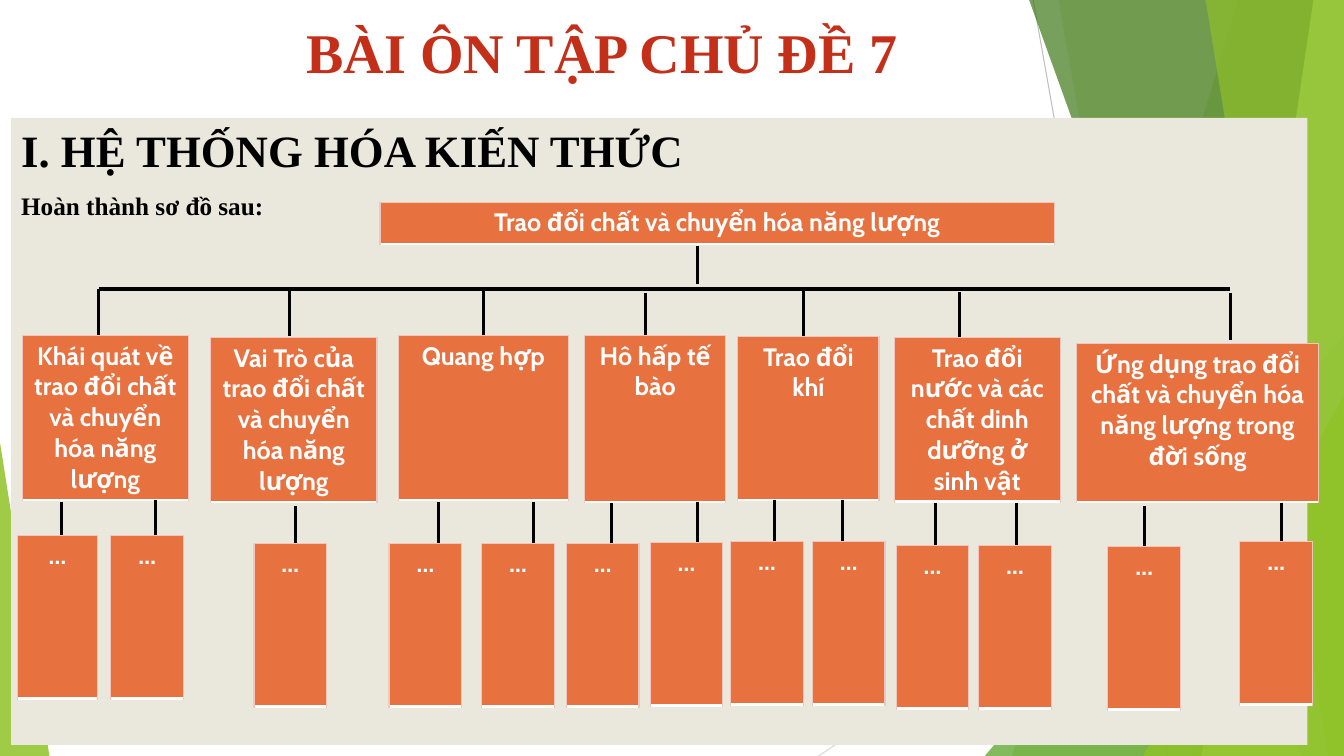
"""Build a review slide with a three-level knowledge tree."""
from dataclasses import dataclass

from lxml.etree import SubElement
from pptx import Presentation
from pptx.dml.color import RGBColor as Rgb
from pptx.enum.shapes import MSO_CONNECTOR as Connector, MSO_SHAPE as Preset
from pptx.enum.text import MSO_ANCHOR as Anchor, MSO_AUTO_SIZE as AutoSize, PP_ALIGN as Align
from pptx.oxml import parse_xml
from pptx.oxml.ns import nsdecls, qn
from pptx.util import Inches, Pt

COLUMNS, ROWS = 133.33, 75
STEM_ROWS = 4.6
LEAF_ROWS = 16.2
BUS_ROW = 28.7


@dataclass(frozen=True)
class Theme:
    """Colours, fonts and type sizes of the slide."""
    heading: str = "C42F1A"
    ink: str = "000000"
    paper: str = "FFFFFF"
    panel: str = "EAE8DC"
    node: str = "E87140"
    node_edge: str = "F3C6BD"
    lime: str = "90C226"
    leaf: str = "54A021"
    forest: str = "3F7819"
    pale: str = "C0E474"
    serif: str = "Times New Roman"
    sans: str = "Cabin"
    title_size: int = 40
    section_size: int = 32
    text_size: int = 18


@dataclass(frozen=True)
class Branch:
    """A topic with its stem (column, row) and leaves (column, row, stem column, stem row)."""
    caption: str
    frame: tuple
    stem: tuple
    leaves: tuple


THEME = Theme()
BRANCHES = (
    Branch("Khái quát về trao đổi chất và chuyển hóa năng lượng", (2.2, 33.3, 16.5, 16.3),
           (9.8, 28.7), ((1.7, 53.1, 6.1, 49.8), (11, 53.1, 15.4, 49.6))),
    Branch("Vai Trò của trao đổi chất và chuyển hóa năng lượng", (20.9, 33.5, 16.5, 16.3),
           (28.7, 28.7), ((25.2, 53.9, 29.3, 50.2),)),
    Branch("Quang hợp", (39.5, 33.3, 16.9, 16.3),
           (48, 28.7), ((38.6, 53.9, 43.5, 49.8), (47.8, 53.9, 52.9, 49.8))),
    Branch("Hô hấp tế bào", (58, 33.3, 14, 16.5),
           (64, 29.1), ((56.2, 53.9, 60.7, 49.9), (64.5, 53.8, 69.2, 49.8))),
    Branch("Trao đổi khí", (73.2, 33.4, 14, 16.2),
           (79.7, 28.8), ((72.5, 53.7, 76.8, 49.6), (80.6, 53.7, 83.6, 49.6))),
    Branch("Trao đổi nước và các chất dinh dưỡng ở sinh vật", (88.7, 33.5, 16.5, 16.2),
           (95.2, 29), ((88.9, 54.1, 92.8, 49.9), (97.1, 54.1, 100.8, 49.9))),
    Branch("Ứng dụng trao đổi chất và chuyển hóa năng lượng trong đời sống", (106.8, 34.1, 24, 15.7),
           (122.1, 29.1), ((109.9, 54.2, 113.5, 50.2), (123, 53.7, 127.1, 49.9))),
)


def grid(*counts):
    """Turn counts of columns or rows into lengths."""
    return [Inches(count / 10) for count in counts]


def write(paragraph, wording, size, font, colour):
    """Add one bold run to a paragraph and return it."""
    run = paragraph.add_run()
    run.text = wording
    run.font.size, run.font.name, run.font.bold = Pt(size), font, True
    run.font.color.rgb = Rgb.from_string(colour)
    return run


def edge(tag, colour, points):
    """Make a solid line element."""
    return parse_xml(f'<a:{tag} {nsdecls("a")} w="{int(Pt(points))}"><a:solidFill>'
                     f'<a:srgbClr val="{colour}"/></a:solidFill></a:{tag}>')


def draw_line(shapes, start, end, colour=THEME.ink, points=2.25):
    """Draw a straight line between two grid points."""
    line = shapes.add_connector(Connector.STRAIGHT, *grid(*start, *end))
    line.line.color.rgb = Rgb.from_string(colour)
    line.line.width = Pt(points)
    SubElement(line.element.spPr, qn("a:effectLst"))


def tint(facet, colour, opacity):
    """Give a facet a translucent fill and no outline."""
    facet.shadow.inherit = False
    facet.fill.solid()
    facet.fill.fore_color.rgb = Rgb.from_string(colour)
    facet.line.fill.background()
    swatch = facet.element.spPr.find(qn("a:solidFill"))[0]
    SubElement(swatch, qn("a:alpha"), val=str(opacity * 1000))


def draw_band(shapes, top_column, bottom_column, colour, opacity):
    """Draw a slanted band that reaches the right edge."""
    corners = [grid(*corner) for corner in
               ((top_column, 0), (COLUMNS, 0), (COLUMNS, ROWS), (bottom_column, ROWS))]
    outline = shapes.build_freeform(*corners[0])
    outline.add_line_segments(corners[1:], close=True)
    tint(outline.convert_to_shape(), colour, opacity)


def draw_peak(shapes, left, top, width, apex, colour, opacity):
    """Draw a triangle standing on the bottom edge."""
    peak = shapes.add_shape(Preset.ISOSCELES_TRIANGLE, *grid(left, top, width, ROWS - top))
    peak.adjustments[0] = apex
    tint(peak, colour, opacity)


def draw_backdrop(slide):
    """Draw the green facets behind the content."""
    backdrop = slide.shapes.add_group_shape()
    facets = backdrop.shapes
    draw_line(facets, (102.5, 0), (115.8, ROWS), "BFBFBF", 0.75)
    draw_line(facets, (COLUMNS, 40.3), (81.2, ROWS), "D9D9D9", 0.75)
    draw_band(facets, 122.8, 100.4, THEME.lime, 30)
    draw_band(facets, 105, 118.3, THEME.lime, 20)
    draw_peak(facets, 97.7, 33.3, 35.6, 1, THEME.leaf, 72)
    draw_band(facets, 102.1, 129.1, THEME.forest, 70)
    draw_band(facets, 130.3, 119.2, THEME.pale, 70)
    draw_band(facets, 119.6, 131.8, THEME.lime, 65)
    draw_peak(facets, 113.4, 39.3, 19.9, 1, THEME.lime, 80)
    draw_peak(facets, 0, 43.9, 4.9, 0, THEME.lime, 85)
    slide.shapes.element.insert(2, backdrop.element)


def place(holder, frame, anchor):
    """Move a placeholder and fix its text layout."""
    holder.left, holder.top, holder.width, holder.height = grid(*frame)
    holder.text_frame.word_wrap = True
    holder.text_frame.auto_size = AutoSize.NONE
    holder.text_frame.vertical_anchor = anchor


def fill_title(title):
    """Write the slide title."""
    place(title, (-1.4, 1.1, 122.3, 7.9), Anchor.MIDDLE)
    heading = title.text_frame.paragraphs[0]
    heading.alignment = Align.CENTER
    run = write(heading, "BÀI ÔN TẬP CHỦ ĐỀ 7", THEME.title_size, THEME.serif, THEME.heading)
    run.font.fill.solid()
    run.font.fill.fore_color.rgb = Rgb.from_string(THEME.heading)
    run.font._element.insert(0, edge("ln", THEME.paper, 0.75))


def fill_panel(panel):
    """Write the section heading and the task on the panel."""
    place(panel, (1.1, 11.7, 128.6, 62.2), Anchor.TOP)
    panel.fill.solid()
    panel.fill.fore_color.rgb = Rgb.from_string(THEME.panel)
    section = panel.text_frame.paragraphs[0]
    task = panel.text_frame.add_paragraph()
    for line, wording, size, gap in (
            (section, "I. HỆ THỐNG HÓA KIẾN THỨC", THEME.section_size, 0),
            (task, "Hoàn thành sơ đồ sau:", THEME.text_size, 10)):
        layout = line._p.get_or_add_pPr()
        layout.set("marL", "0")
        layout.set("indent", "0")
        SubElement(layout, qn("a:buNone"))
        line.space_before = Pt(gap)
        write(line, wording, size, THEME.serif, THEME.ink)


def draw_node(shapes, caption, frame):
    """Draw one node of the tree as a single-cell table."""
    node = shapes.add_table(1, 1, *grid(*frame)).table
    node.first_row = node.horz_banding = False
    cell = node.cell(0, 0)
    cell.fill.solid()
    cell.fill.fore_color.rgb = Rgb.from_string(THEME.node)
    borders = [edge(side, THEME.node_edge, 1) for side in ("lnL", "lnR", "lnT")]
    borders.append(edge("lnB", THEME.paper, 2))
    for position, border in enumerate(borders):
        cell._tc.tcPr.insert(position, border)
    label = cell.text_frame.paragraphs[0]
    label.alignment = Align.CENTER
    write(label, caption, THEME.text_size, THEME.sans, THEME.paper)


def draw_stem(shapes, column, row):
    """Draw a vertical stem of the common length."""
    draw_line(shapes, (column, row), (column, row + STEM_ROWS))


def draw_tree(shapes):
    """Draw the root, the bus line, the branches and their leaves."""
    draw_node(shapes, "Trao đổi chất và chuyển hóa năng lượng", (37.7, 20.1, 66.9, 4.1))
    draw_line(shapes, (69.2, 24.4), (69.2, 28.2))
    draw_line(shapes, (9.8, BUS_ROW), (122, BUS_ROW), points=3)
    for branch in BRANCHES:
        draw_stem(shapes, *branch.stem)
        draw_node(shapes, branch.caption, branch.frame)
        for column, row, stem_column, stem_row in branch.leaves:
            draw_stem(shapes, stem_column, stem_row)
            width = 8 if column == 1.7 else 7.2
            draw_node(shapes, "…", (column, row, width, LEAF_ROWS))


def main():
    """Build and save the slide."""
    deck = Presentation()
    deck.slide_width, deck.slide_height = grid(COLUMNS, ROWS)
    slide = deck.slides.add_slide(deck.slide_layouts[1])
    draw_backdrop(slide)
    fill_title(slide.shapes.title)
    fill_panel(slide.placeholders[1])
    draw_tree(slide.shapes)
    deck.save("out.pptx")


if __name__ == "__main__":
    main()
